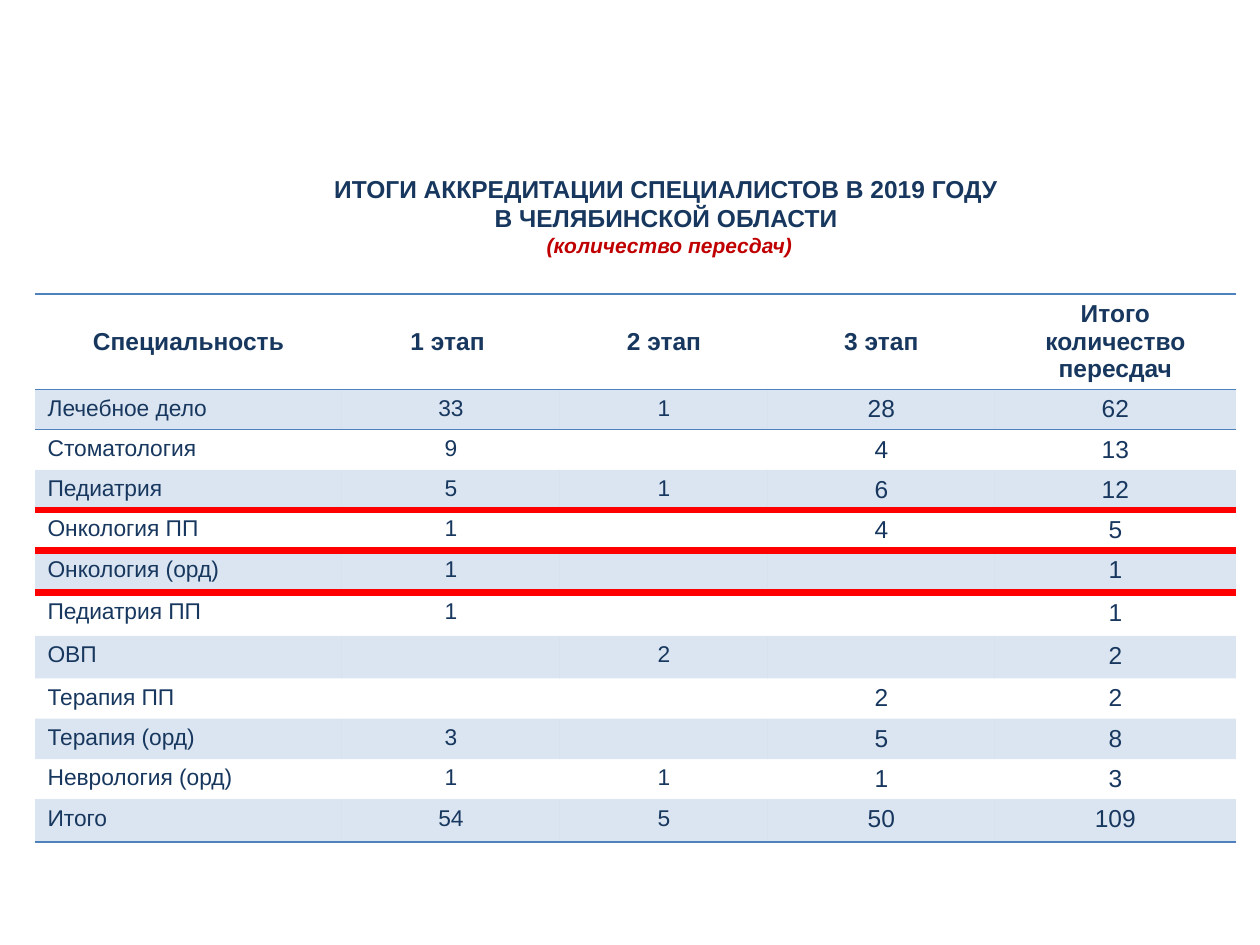
from lxml import etree
from pptx import Presentation
from pptx.dml.color import RGBColor
from pptx.enum.text import MSO_ANCHOR, MSO_AUTO_SIZE, PP_ALIGN
from pptx.oxml.ns import qn
from pptx.util import Pt

CENTER, LEFT = PP_ALIGN.CENTER, PP_ALIGN.LEFT
TOP, MIDDLE = MSO_ANCHOR.TOP, MSO_ANCHOR.MIDDLE
PX = 914400 // 126
FONT = "Arial"
NAVY = RGBColor(0x17, 0x37, 0x5E)
DARK_RED = RGBColor(0xC0, 0x00, 0x00)
RED = RGBColor(0xFF, 0x00, 0x00)
BLUE = RGBColor(0x4F, 0x81, 0xBD)
WHITE = RGBColor(0xFF, 0xFF, 0xFF)
NO_STYLE = "{2D5ABB26-0587-4C30-8999-92F81FD0307C}"

TITLE_LINES = [
    ("ИТОГИ АККРЕДИТАЦИИ СПЕЦИАЛИСТОВ В 2019 ГОДУ ", 14, NAVY, False),
    ("В ЧЕЛЯБИНСКОЙ ОБЛАСТИ ", 14, NAVY, False),
    ("(количество пересдач)", 12, DARK_RED, True),
]
HEADER = ["Специальность", "1 этап ", "2 этап", "3 этап", "Итого количество пересдач"]
RESULTS = [
    ("Лечебное дело", 33, 1, 28, 62),
    ("Стоматология", 9, "", 4, 13),
    ("Педиатрия", 5, 1, 6, 12),
    ("Онкология ПП", 1, "", 4, 5),
    ("Онкология (орд)", 1, "", "", 1),
    ("Педиатрия ПП", 1, "", "", 1),
    ("ОВП", "", 2, "", 2),
    ("Терапия ПП", "", "", 2, 2),
    ("Терапия (орд)", 3, "", 5, 8),
    ("Неврология (орд)", 1, 1, 1, 3),
    ("Итого", 54, 5, 50, 109),
]
COLUMN_WIDTHS = [307, 218, 208, 227, 241]
COLUMN_SIZES = [13, 13, 13, 14, 14]
HEADER_HEIGHT, ROW_HEIGHT, TALL_ROW_HEIGHT = 95, 40, 43
TALL_ROWS = {"Педиатрия ПП", "Итого"}
# Rules lie between rows: number of the row above -> colour, width in points
RULES = {0: (BLUE, 1), 1: (BLUE, 1), 4: (RED, 4.5), 5: (RED, 4.5), 12: (BLUE, 1)}


def format_font(font, size, color, bold=False, italic=False):
    font.name, font.size = FONT, Pt(size)
    font.bold, font.italic = bold, italic
    font.color.rgb = color


def add_border(cell, side, color, width):
    line = etree.SubElement(cell._tc.get_or_add_tcPr(), qn(f"a:{side}"), w=str(Pt(width)))
    fill = etree.SubElement(line, qn("a:solidFill"))
    etree.SubElement(fill, qn("a:srgbClr"), val=str(color))


def shade(cell):
    """Fill the cell with blue at 20 % opacity."""
    cell.fill.solid()
    cell.fill.fore_color.rgb = BLUE
    color = cell._tc.tcPr.find(f".//{qn('a:solidFill')}[last()]")
    color = cell._tc.tcPr.findall(qn("a:solidFill"))[0][0]
    etree.SubElement(color, qn("a:alpha"), val="20000")


def write_cell(cell, text, size, align, anchor, bold):
    cell.text = str(text)
    cell.vertical_anchor = anchor
    paragraph = cell.text_frame.paragraphs[0]
    paragraph.alignment = align
    for run in paragraph.runs:
        format_font(run.font, size, NAVY, bold)
    if not paragraph.runs:
        etree.SubElement(paragraph._p, qn("a:endParaRPr"), sz=str(size * 100))


def add_title(slide):
    title = slide.shapes.title
    title.left, title.top, title.width, title.height = (v * PX for v in (233, 165, 873, 89))
    title.fill.solid()
    title.fill.fore_color.rgb = WHITE
    frame = title.text_frame
    frame.auto_size = MSO_AUTO_SIZE.NONE
    frame.word_wrap = True
    frame.vertical_anchor = TOP
    frame.margin_top = 9 * PX
    frame.text = "\n".join(line[0] for line in TITLE_LINES)
    for paragraph, (_, size, color, italic) in zip(frame.paragraphs, TITLE_LINES):
        paragraph.alignment = CENTER
        format_font(paragraph.runs[0].font, size, color, True, italic)


def add_results(slide):
    rows = [HEADER, *RESULTS]
    heights = [HEADER_HEIGHT] + [
        TALL_ROW_HEIGHT if row[0] in TALL_ROWS else ROW_HEIGHT for row in RESULTS
    ]
    table = slide.shapes.add_table(
        len(rows), len(HEADER), 35 * PX, 294 * PX,
        sum(COLUMN_WIDTHS) * PX, sum(heights) * PX,
    ).table
    table._tbl.tblPr.find(qn("a:tableStyleId")).text = NO_STYLE
    for column, width in zip(table.columns, COLUMN_WIDTHS):
        column.width = width * PX
    for r, (row, height) in enumerate(zip(rows, heights)):
        table.rows[r].height = height * PX
        for c, text in enumerate(row):
            cell = table.cell(r, c)
            if r == 0:
                write_cell(cell, text, 14, CENTER, MIDDLE, True)
            else:
                write_cell(cell, text, COLUMN_SIZES[c], CENTER if c else LEFT, TOP, False)
            for side, rule in (("lnT", r), ("lnB", r + 1)):
                if rule in RULES:
                    add_border(cell, side, *RULES[rule])
            if r % 2:
                shade(cell)
            else:
                cell.fill.background()


def main():
    deck = Presentation()
    deck.slide_width, deck.slide_height = 1260 * PX, 945 * PX
    slide = deck.slides.add_slide(deck.slide_layouts[5])
    add_title(slide)
    add_results(slide)
    deck.save("out.pptx")


if __name__ == "__main__":
    main()
